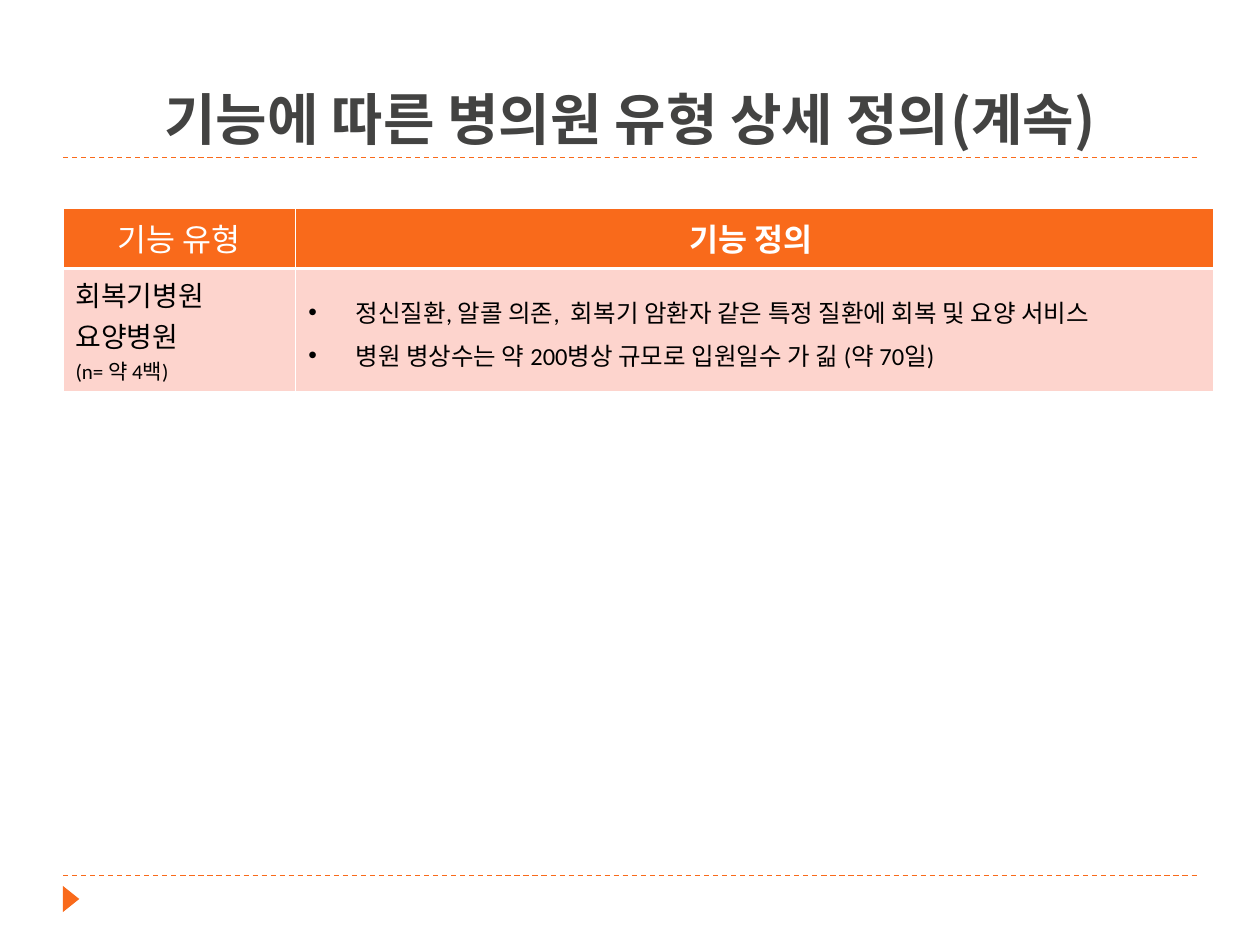
from lxml import etree
from pptx import Presentation
from pptx.dml.color import RGBColor
from pptx.enum import dml, shapes, text
from pptx.oxml import ns
from pptx.util import Pt

ORANGE = RGBColor(0xF9, 0x6A, 0x1B)
PINK = RGBColor(0xFD, 0xD4, 0xCD)
GRAY = RGBColor(0x43, 0x43, 0x42)
WHITE = RGBColor(0xFF, 0xFF, 0xFF)
BLACK = RGBColor(0, 0, 0)
HANGUL = "Noto Sans CJK KR"
LATIN = "Calibri"
CENTER = text.PP_ALIGN.CENTER


def style(para, size, color, bold=False, face=LATIN):
    font = para.font
    font.size, font.bold, font.name = Pt(size), bold, face
    font.color.rgb = color
    props = para._p.get_or_add_pPr().find(ns.qn("a:defRPr"))
    props.set("kern", "0")
    etree.SubElement(props, ns.qn("a:ea"), typeface=HANGUL)


def bullet(para):
    props = para._p.get_or_add_pPr()
    props.set("marL", str(Pt(27)))
    props.set("indent", str(-Pt(27)))
    para.line_spacing = 1.2
    etree.SubElement(props, ns.qn("a:buFont"), typeface="Arial")
    etree.SubElement(props, ns.qn("a:buChar"), char="•")


def rule(slide, y):
    line = slide.shapes.add_connector(
        shapes.MSO_CONNECTOR.STRAIGHT, Pt(36), Pt(y), Pt(684), Pt(y))
    line.line.color.rgb = ORANGE
    line.line.width = Pt(0.75)
    line.line.dash_style = dml.MSO_LINE.DASH
    etree.SubElement(line._element.spPr, ns.qn("a:effectLst"))


def marker(slide):
    mark = slide.shapes.add_shape(
        shapes.MSO_SHAPE.ISOSCELES_TRIANGLE, Pt(33.1), Pt(509), Pt(15), Pt(9.4))
    mark.rotation = 90
    mark.shadow.inherit = False
    mark.fill.solid()
    mark.fill.fore_color.rgb = ORANGE
    mark.line.fill.background()


def title(slide, words):
    frame = slide.shapes.add_textbox(Pt(36), Pt(12), Pt(648), Pt(78)).text_frame
    frame.word_wrap = True
    frame.vertical_anchor = text.MSO_ANCHOR.BOTTOM
    para = frame.paragraphs[0]
    para.text = words
    para.alignment = CENTER
    para.line_spacing = 1.2
    style(para, 32, GRAY, True, HANGUL)


def paint(cell, color, top, bottom):
    cell.vertical_anchor = text.MSO_ANCHOR.MIDDLE
    cell.fill.solid()
    cell.fill.fore_color.rgb = color
    props = cell._tc.get_or_add_tcPr()
    # Borders come before the fill
    for i, (side, width) in enumerate(
            [("L", 1), ("R", 1), ("T", top), ("B", bottom)]):
        edge = etree.Element(ns.qn("a:ln" + side), w=str(Pt(width)))
        fill = etree.SubElement(edge, ns.qn("a:solidFill"))
        etree.SubElement(fill, ns.qn("a:srgbClr"), val=str(WHITE))
        props.insert(i, edge)


def head(cell, words, bold, face):
    para = cell.text_frame.paragraphs[0]
    para.text = words
    para.alignment = CENTER
    style(para, 18, WHITE, bold, face)
    paint(cell, ORANGE, 1, 2.25)


def kind(cell, names, count):
    para = cell.text_frame.paragraphs[0]
    for name in names:
        para.add_run().text = name
        para.add_line_break()
    note = para.add_run()
    note.text = count
    note.font.size = Pt(12)
    style(para, 16, BLACK)
    paint(cell, PINK, 2.25, 1)


def points(cell, lines):
    frame = cell.text_frame
    frame.text = "\n".join(lines)
    for para in frame.paragraphs:
        bullet(para)
        style(para, 14, BLACK)
    paint(cell, PINK, 2.25, 1)


def grid(slide):
    table = slide.shapes.add_table(
        2, 2, Pt(36), Pt(118.8), Pt(657.4), Pt(105)).table
    for col, width in zip(table.columns, (133, 524.4)):
        col.width = Pt(width)
    # The body row holds three lines in its first cell
    for row, height in zip(table.rows, (34.5, 70.5)):
        row.height = Pt(height)
    return table


def main():
    deck = Presentation()
    deck.slide_width, deck.slide_height = Pt(720), Pt(540)
    slide = deck.slides.add_slide(deck.slide_layouts[6])

    # Frame of the page
    for y in (500.4, 90):
        rule(slide, y)
    marker(slide)
    title(slide, "기능에 따른 병의원 유형 상세 정의(계속)")

    # Table of types and definitions
    table = grid(slide)
    head(table.cell(0, 0), "기능 유형", False, HANGUL)
    head(table.cell(0, 1), "기능 정의 ", True, LATIN)
    kind(table.cell(1, 0), ["회복기병원", "요양병원"], "(n= 약 4백)")
    points(table.cell(1, 1), [
        "정신질환, 알콜 의존,  회복기 암환자 같은 특정 질환에 회복 및 요양 서비스",
        "병원 병상수는 약 200병상 규모로 입원일수 가 긺 (약 70일)",
    ])
    deck.save("out.pptx")


if __name__ == "__main__":
    main()
